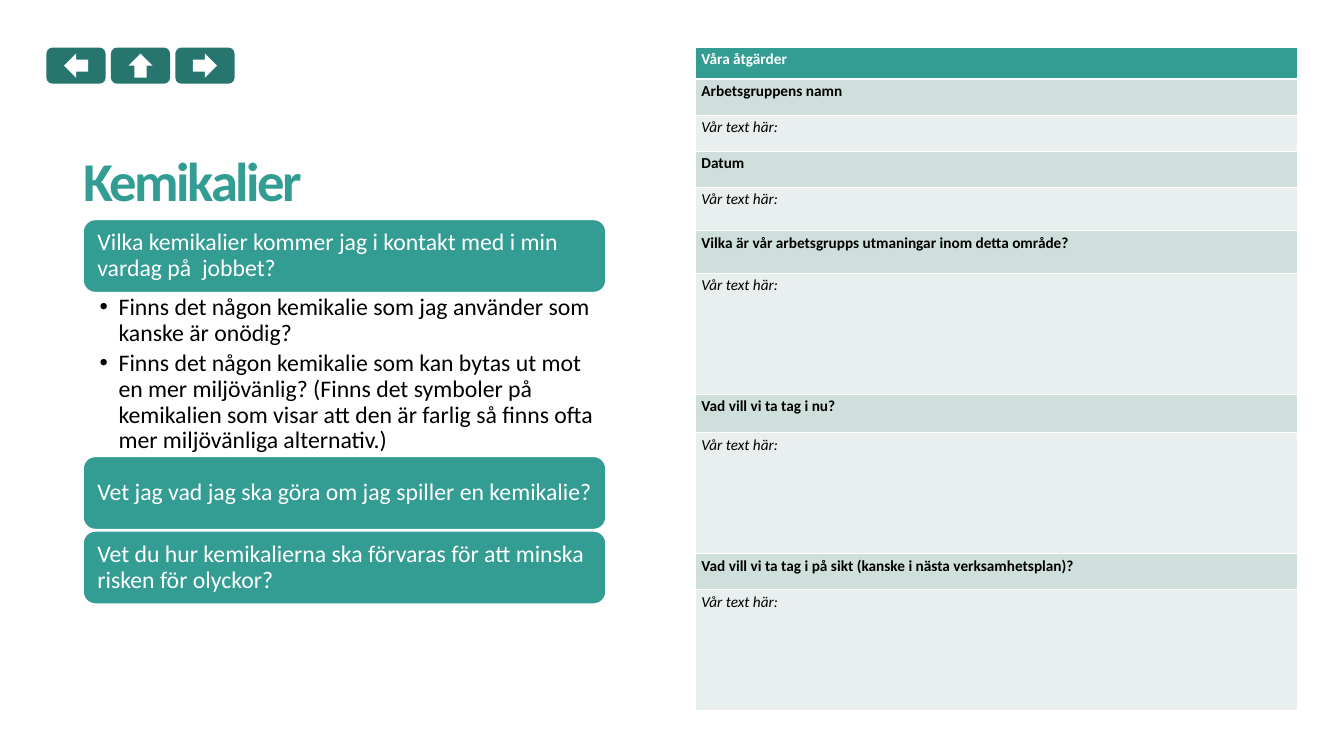
"""Builds the slide on chemicals at work, with questions and an action table."""
from lxml import etree
from pptx import Presentation
from pptx.dml.color import RGBColor
from pptx.enum import shapes, text
from pptx.oxml import ns
from pptx.util import Cm, Pt

TITLE = "Kemikalier"
QUESTIONS = [
    (9.12, "Vilka kemikalier kommer jag i kontakt med i min vardag på  jobbet?"),
    (18.97, "Vet jag vad jag ska göra om jag spiller en kemikalie?"),
    (22.07, "Vet du hur kemikalierna ska förvaras för att minska risken för olyckor?"),
]
BULLETS = [
    "Finns det någon kemikalie som jag använder som kanske är onödig?",
    "Finns det någon kemikalie som kan bytas ut mot en mer miljövänlig? "
    "(Finns det symboler på kemikalien som visar att den är farlig så finns "
    "ofta mer miljövänliga alternativ.)",
]
HEADER, HEADER_HEIGHT = "Våra åtgärder", 1.32
ANSWER = "Vår text här:"
SECTIONS = [
    ("Arbetsgruppens namn", 1.5, 1.5),
    ("Datum", 1.5, 1.8),
    ("Vilka är vår arbetsgrupps utmaningar inom detta område?", 1.78, 5.03),
    ("Vad vill vi ta tag i nu?", 1.6, 5.03),
    ("Vad vill vi ta tag i på sikt (kanske i nästa verksamhetsplan)?", 1.5, 5.03),
]
BUTTON_ROTATIONS = [180, 270, 0]
TEAL, DARK_TEAL, WHITE, BLACK = "339D94", "26766F", "FFFFFF", "000000"
LABEL_FILL, ANSWER_FILL = "CEDFDC", "E8EFEE"
LEFT, WIDTH, BOX_HEIGHT = 3.45, 21.74, 3.05
TABLE_LEFT, TABLE_TOP, TABLE_WIDTH = 28.9, 1.96, 25.02


def rgb(color):
    return RGBColor.from_string(color)


def write(p, content, size=28, color=BLACK, bold=False, italic=False,
          spacing=None, after=0, tracking=None):
    p.alignment = text.PP_ALIGN.LEFT
    p.line_spacing = spacing
    p.space_before, p.space_after = Pt(0), Pt(after)
    r = p.add_run()
    r.text = content
    r.font.name, r.font.size = "Calibri", Pt(size)
    r.font.bold, r.font.italic = bold, italic
    r.font.color.rgb = rgb(color)
    if tracking:
        r.font._element.set("spc", str(round(tracking * 100)))


def frame(s, anchor, left, top, right, bottom):
    tf = s.text_frame
    tf.word_wrap, tf.auto_size = True, text.MSO_AUTO_SIZE.NONE
    tf.vertical_anchor = anchor
    tf.margin_left, tf.margin_top = Cm(left), Cm(top)
    tf.margin_right, tf.margin_bottom = Cm(right), Cm(bottom)
    return tf


def add_filled(slide, kind, left, top, width, height, fill, line=None, rotation=0):
    s = slide.shapes.add_shape(kind, Cm(left), Cm(top), Cm(width), Cm(height))
    s.shadow.inherit = False
    s.rotation = rotation
    s.fill.solid()
    s.fill.fore_color.rgb = rgb(fill)
    if line:
        s.line.color.rgb, s.line.width = rgb(line), Pt(2)
    else:
        s.line.fill.background()
    return s


def add_bullet(p):
    pPr = p._p.get_or_add_pPr()
    pPr.set("marL", str(Cm(0.79)))
    pPr.set("indent", str(Cm(-0.79)))
    etree.SubElement(pPr, ns.qn("a:buFont")).set("typeface", "Arial")
    etree.SubElement(pPr, ns.qn("a:buChar")).set("char", "•")


def add_borders(cell, top, bottom):
    tcPr = cell._tc.get_or_add_tcPr()
    for side, width in (("L", 1), ("R", 1), ("T", top), ("B", bottom)):
        ln = etree.SubElement(tcPr, ns.qn(f"a:ln{side}"), w=str(Pt(width)))
        fill = etree.SubElement(ln, ns.qn("a:solidFill"))
        etree.SubElement(fill, ns.qn("a:srgbClr"), val=WHITE)


def add_title(slide):
    s = slide.shapes.title
    s.left, s.top, s.width, s.height = Cm(LEFT), Cm(3.4), Cm(WIDTH), Cm(5.66)
    tf = frame(s, text.MSO_ANCHOR.BOTTOM, 0, 0, 0, 0.2)
    write(tf.paragraphs[0], TITLE, size=64.5, color=TEAL, bold=True,
          spacing=0.85, tracking=-2.8)


def add_questions(slide):
    for top, question in QUESTIONS:
        s = add_filled(slide, shapes.MSO_SHAPE.ROUNDED_RECTANGLE, LEFT, top,
                       WIDTH, BOX_HEIGHT, TEAL, line=WHITE)
        tf = frame(s, text.MSO_ANCHOR.MIDDLE, 0.45, 0.45, 0.45, 0.45)
        write(tf.paragraphs[0], question, color=WHITE, spacing=0.9)
    top = QUESTIONS[0][0] + BOX_HEIGHT
    s = slide.shapes.add_textbox(Cm(LEFT), Cm(top), Cm(WIDTH),
                                 Cm(QUESTIONS[1][0] - top))
    tf = frame(s, text.MSO_ANCHOR.TOP, 0.69, 0.1, 0.56, 0.1)
    for i, bullet in enumerate(BULLETS):
        p = tf.add_paragraph() if i else tf.paragraphs[0]
        add_bullet(p)
        write(p, bullet, spacing=0.9, after=5.6)


def add_buttons(slide):
    width, height, arrow, top = 2.46, 1.5, 1, 1.98
    for i, rotation in enumerate(BUTTON_ROTATIONS):
        left = 1.93 + i * 2.68
        add_filled(slide, shapes.MSO_SHAPE.ROUNDED_RECTANGLE, left, top,
                   width, height, DARK_TEAL)
        add_filled(slide, shapes.MSO_SHAPE.RIGHT_ARROW, left + (width - arrow) / 2,
                   top + (height - arrow) / 2, arrow, arrow, WHITE, rotation=rotation)


def add_actions(slide):
    rows = [(HEADER, HEADER_HEIGHT, TEAL, dict(color=WHITE, bold=True))]
    for label, label_height, answer_height in SECTIONS:
        rows.append((label, label_height, LABEL_FILL, dict(bold=True)))
        rows.append((ANSWER, answer_height, ANSWER_FILL, dict(italic=True)))
    total = sum(row[1] for row in rows)
    table = slide.shapes.add_table(len(rows), 1, Cm(TABLE_LEFT), Cm(TABLE_TOP),
                                   Cm(TABLE_WIDTH), Cm(total)).table
    for i, (content, height, fill, style) in enumerate(rows):
        table.rows[i].height = Cm(height)
        cell = table.cell(i, 0)
        add_borders(cell, top=3 if i == 1 else 1, bottom=3 if i == 0 else 1)
        cell.fill.solid()
        cell.fill.fore_color.rgb = rgb(fill)
        write(cell.text_frame.paragraphs[0], content, size=18, **style)


def main():
    prs = Presentation()
    prs.slide_width, prs.slide_height = Cm(55.86), Cm(31.43)
    slide = prs.slides.add_slide(prs.slide_layouts[5])
    add_questions(slide)
    add_title(slide)
    add_buttons(slide)
    add_actions(slide)
    prs.save("out.pptx")


if __name__ == "__main__":
    main()
